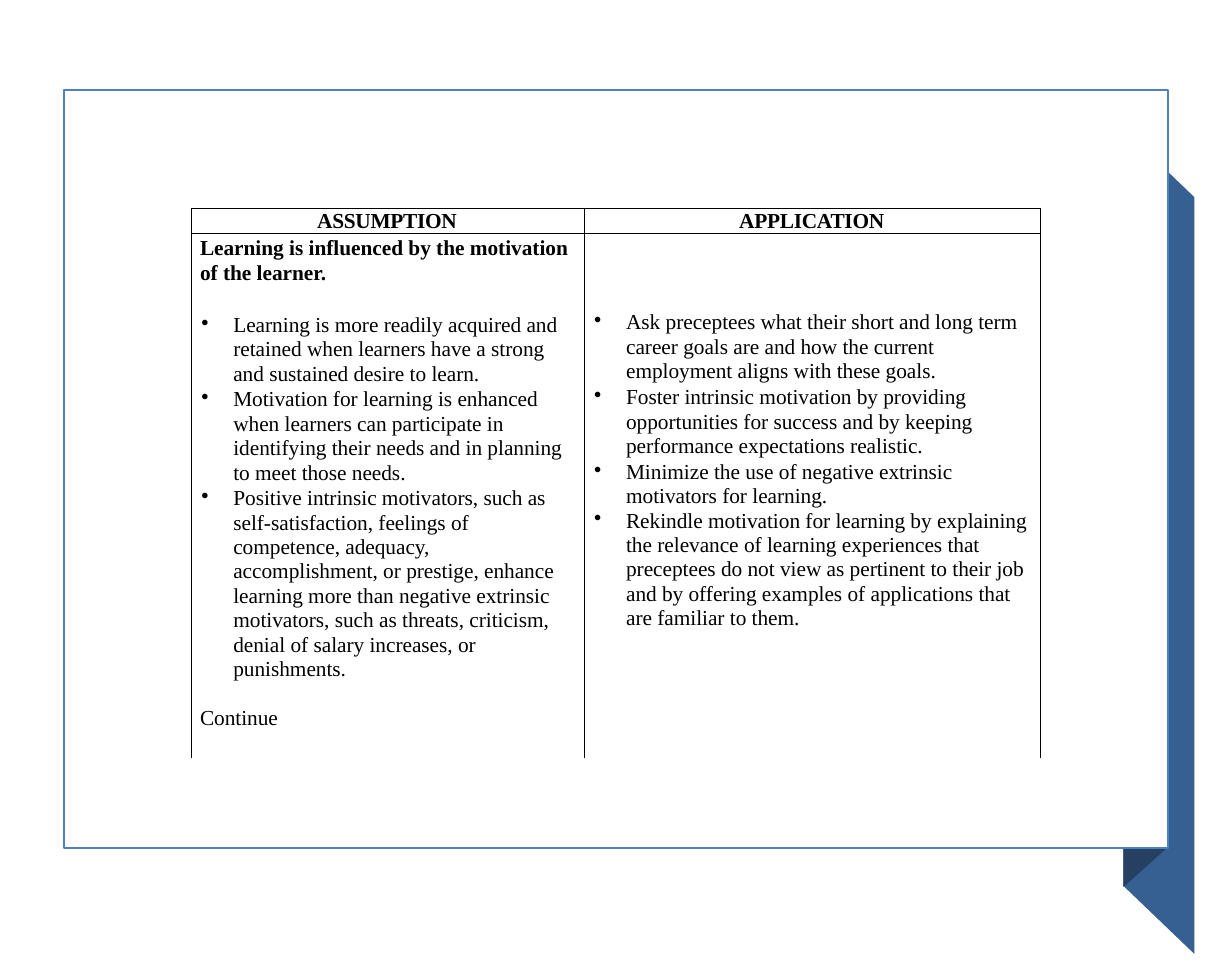
import dataclasses
import typing

import pptx
import pptx.dml.color
import pptx.enum.shapes
import pptx.enum.text
import pptx.oxml.ns
import pptx.util
import lxml.etree

Inches = pptx.util.Inches
Pt = pptx.util.Pt
Align = pptx.enum.text.PP_ALIGN


@dataclasses.dataclass(frozen=True)
class Theme:
    font: str = "Times New Roman"
    size: float = 10.6
    lead: float = 12.1
    rule: float = 0.4
    edge: float = 1
    ink: str = "000000"
    paper: str = "FFFFFF"
    frame: str = "4F81BD"
    band: str = "376092"
    fold: str = "254061"


@dataclasses.dataclass(frozen=True)
class Line:
    text: str
    bold: bool = False
    mark: bool = False
    gap: float = 0
    align: typing.Any = Align.LEFT
    space: int = 0


@dataclasses.dataclass(frozen=True)
class Box:
    row: int
    col: int
    top: float
    lines: tuple[Line, ...]


@dataclasses.dataclass(frozen=True)
class Ribbon:
    color: str
    points: tuple[tuple[float, float], ...]


THEME = Theme()
WIDTHS = (2.71, 3.15)
HEIGHTS = (0.17, 3.62)

RIBBONS = (
    Ribbon(THEME.band, ((8.24, 6.58), (7.75, 6.11), (7.75, 0.89), (8.24, 1.36))),
    Ribbon(THEME.fold, ((8.04, 5.86), (7.75, 6.12), (7.75, 0.88), (8.04, 0.62))),
)

BOXES = (
    Box(0, 0, 0, (Line("ASSUMPTION", bold=True, align=Align.CENTER, space=-10),)),
    Box(0, 1, 0, (Line("APPLICATION", bold=True, align=Align.CENTER, space=-10),)),
    Box(1, 0, 0.02, (
        Line("Learning is influenced by the motivation of the learner.", bold=True),
        Line("Learning is more readily acquired and retained when learners have "
             "a strong and sustained desire to learn.", mark=True, gap=13.7),
        Line("Motivation for learning is enhanced when learners can participate in "
             "identifying their needs and in planning to meet those needs.",
             mark=True, gap=0.8),
        Line("Positive intrinsic motivators, such as self-satisfaction, feelings of "
             "competence, adequacy, accomplishment, or prestige, enhance learning "
             "more than negative extrinsic motivators, such as threats, criticism, "
             "denial of salary increases, or punishments.", mark=True, gap=0.7),
        Line("Continue", gap=12.2),
    )),
    Box(1, 1, 0.53, (
        Line("Ask preceptees what their short and long term career goals are and "
             "how the current employment aligns with these goals.", mark=True),
        Line("Foster intrinsic motivation by providing opportunities for success "
             "and by keeping performance expectations realistic.",
             mark=True, gap=0.8),
        Line("Minimize the use of negative extrinsic motivators for learning.",
             mark=True, gap=0.8),
        Line("Rekindle motivation for learning by explaining the relevance of "
             "learning experiences that preceptees do not view as pertinent to "
             "their job and by offering examples of applications that are "
             "familiar to them.", mark=True),
    )),
)


def tint(code: str) -> pptx.dml.color.RGBColor:
    return pptx.dml.color.RGBColor.from_string(code)


def apply(item: typing.Any, values: dict[str, typing.Any]) -> None:
    for name, value in values.items():
        setattr(item, name, value)


def node(parent: typing.Any, tag: str, **values: str) -> typing.Any:
    return lxml.etree.SubElement(parent, pptx.oxml.ns.qn(tag), values)


def paint(shape: typing.Any, color: str) -> None:
    shape.shadow.inherit = False
    shape.fill.solid()
    shape.fill.fore_color.rgb = tint(color)


def draw_ribbon(slide: typing.Any, ribbon: Ribbon) -> None:
    start, *rest = [(Inches(x), Inches(y)) for x, y in ribbon.points]
    outline = slide.shapes.build_freeform(*start)
    outline.add_line_segments(rest, close=True)
    shape = outline.convert_to_shape()
    paint(shape, ribbon.color)
    shape.line.fill.background()


def draw_frame(slide: typing.Any) -> None:
    kind = pptx.enum.shapes.MSO_SHAPE.RECTANGLE
    shape = slide.shapes.add_shape(
        kind, Inches(0.44), Inches(0.62), Inches(7.62), Inches(5.23))
    paint(shape, THEME.paper)
    shape.line.color.rgb = tint(THEME.frame)
    shape.line.width = Pt(THEME.edge)


def write(para: typing.Any, line: Line) -> None:
    apply(para, {"alignment": line.align, "line_spacing": Pt(THEME.lead),
                 "space_before": Pt(line.gap)})
    run = para.add_run()
    run.text = line.text
    apply(run.font, {"name": THEME.font, "size": Pt(THEME.size), "bold": line.bold})
    run.font.color.rgb = tint(THEME.ink)
    run._r.get_or_add_rPr().set("spc", str(line.space))
    if line.mark:
        props = para._p.get_or_add_pPr()
        props.set("marL", str(Inches(0.23)))
        props.set("indent", str(-Inches(0.22)))
        node(props, "a:buChar", char="•")


def border(cell: typing.Any, last: bool) -> None:
    props = cell._tc.get_or_add_tcPr()
    for place, side in enumerate("LRTB"):
        rule = node(props, f"a:ln{side}", w=str(Pt(THEME.rule)))
        if last and side == "B":
            node(rule, "a:noFill")
        else:
            node(node(rule, "a:solidFill"), "a:srgbClr", val=THEME.ink)
        props.insert(place, rule)


def fill_cell(table: typing.Any, box: Box) -> None:
    cell = table.cell(box.row, box.col)
    apply(cell, {"margin_left": Inches(0.06), "margin_right": Inches(0.07),
                 "margin_top": Inches(box.top), "margin_bottom": 0,
                 "vertical_anchor": pptx.enum.text.MSO_ANCHOR.TOP})
    cell.fill.background()
    border(cell, box.row == len(HEIGHTS) - 1)
    frame = cell.text_frame
    for place, line in enumerate(box.lines):
        write(frame.add_paragraph() if place else frame.paragraphs[0], line)


def draw_table(slide: typing.Any) -> None:
    table = slide.shapes.add_table(
        len(HEIGHTS), len(WIDTHS), Inches(1.32), Inches(1.44),
        Inches(sum(WIDTHS)), Inches(sum(HEIGHTS))).table
    apply(table, {"first_row": False, "horz_banding": False})
    for col, width in zip(table.columns, WIDTHS):
        col.width = Inches(width)
    for row, height in zip(table.rows, HEIGHTS):
        row.height = Inches(height)
    for box in BOXES:
        fill_cell(table, box)


def main() -> None:
    deck = pptx.Presentation()
    apply(deck, {"slide_width": Inches(8.5), "slide_height": Inches(6.65)})
    slide = deck.slides.add_slide(deck.slide_layouts[6])
    # Folded ribbon behind the panel
    for ribbon in RIBBONS:
        draw_ribbon(slide, ribbon)
    # Panel
    draw_frame(slide)
    # Assumptions and their applications
    draw_table(slide)
    deck.save("out.pptx")


if __name__ == "__main__":
    main()
